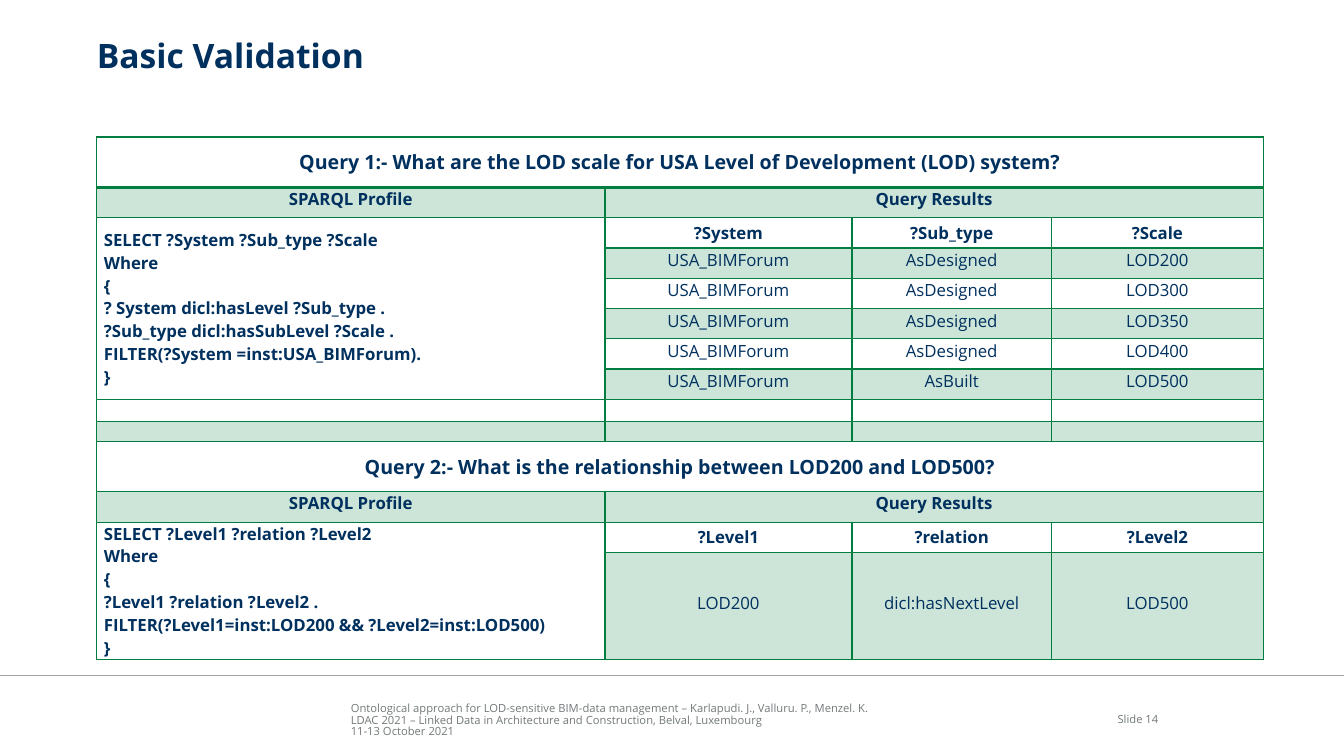
from pptx import Presentation
from pptx.dml.color import RGBColor
from pptx.enum.shapes import MSO_CONNECTOR
from pptx.enum.text import MSO_ANCHOR as Anchor, MSO_AUTO_SIZE as Fit, PP_ALIGN as Align
from pptx.oxml.ns import qn
from pptx.util import Inches, Pt
from lxml.etree import SubElement

COLORS = {"navy": "00305E", "green": "007D40", "gray": "727879", "rule": "A6A6A6"}
FONT = "Open Sans"
COLS = [5.04, 2.45, 1.98, 2.1]
GAPS = [0.22, 0.2]

SCALES = {
    "title": "Query 1:- What are the LOD scale for USA Level of Development (LOD) system?",
    "code": ["SELECT ?System ?Sub_type ?Scale", "Where", "{",
             "? System dicl:hasLevel ?Sub_type .",
             "?Sub_type dicl:hasSubLevel ?Scale .",
             "FILTER(?System =inst:USA_BIMForum).", "}"],
    "heads": ["?System", "?Sub_type", "?Scale"],
    "results": [["USA_BIMForum", "AsDesigned", f"LOD{n}"] for n in (200, 300, 350, 400)]
               + [["USA_BIMForum", "AsBuilt", "LOD500"]],
    "height": 0.3,
}
LEVELS = {
    "title": "Query 2:- What is the relationship between LOD200 and LOD500?",
    "code": ["SELECT ?Level1 ?relation ?Level2", "Where", "{",
             "?Level1 ?relation ?Level2 .",
             "FILTER(?Level1=inst:LOD200 && ?Level2=inst:LOD500)", "}"],
    "heads": ["?Level1", "?relation", "?Level2"],
    "results": [["LOD200", "dicl:hasNextLevel", "LOD500"]],
    "height": 1.06,
}
FOOTER = [
    "Ontological approach for LOD-sensitive BIM-data management – Karlapudi. J., Valluru. P., Menzel. K.",
    "LDAC 2021 – Linked Data in Architecture and Construction, Belval, Luxembourg",
    "11-13 October 2021",
]


def rgb(name):
    return RGBColor.from_string(COLORS[name])


def write(frame, lines, size, color="navy", bold=False, align=Align.LEFT, spacing=None):
    for i, line in enumerate(lines):
        para = frame.add_paragraph() if i else frame.paragraphs[0]
        para.alignment = align
        if spacing:
            para.line_spacing = spacing
        run = para.add_run()
        run.text = line
        font = run.font
        font.name, font.size, font.bold = FONT, Pt(size), bold
        font.color.rgb = rgb(color)


def clear_insets(frame):
    frame.margin_left = frame.margin_right = frame.margin_top = frame.margin_bottom = 0
    frame.word_wrap = True
    frame.auto_size = Fit.NONE


def add_title(slide, left, top, width, height):
    title = slide.shapes.title
    title.left, title.top = Inches(left), Inches(top)
    title.width, title.height = Inches(width), Inches(height)
    frame = title.text_frame
    clear_insets(frame)
    frame.vertical_anchor = Anchor.TOP
    write(frame, ["Basic Validation"], 24, bold=True, spacing=0.95)


def add_note(slide, lines, left, top, width, height, align):
    box = slide.shapes.add_textbox(Inches(left), Inches(top), Inches(width), Inches(height))
    clear_insets(box.text_frame)
    box.text_frame.vertical_anchor = Anchor.BOTTOM
    write(box.text_frame, lines, 8, "gray", align=align, spacing=0.85)


def add_footer(slide, top, width):
    rule = slide.shapes.add_connector(
        MSO_CONNECTOR.STRAIGHT, 0, Inches(top), Inches(width), Inches(top))
    rule.line.color.rgb = rgb("rule")
    rule.line.width = Pt(1)
    SubElement(rule._element.spPr, qn("a:effectLst"))
    add_note(slide, FOOTER, 3.48, top + 0.22, 5.57, 0.4, Align.LEFT)
    add_note(slide, ["Slide 14"], 10.72, top + 0.1, 0.77, 0.4, Align.RIGHT)


def add_border(cell, edge, points):
    line = SubElement(cell._tc.get_or_add_tcPr(), qn(f"a:ln{edge}"), w=str(Pt(points)))
    fill = SubElement(line, qn("a:solidFill"))
    SubElement(fill, qn("a:srgbClr"), val=COLORS["green"])


def style_cell(cell, row):
    """Draw the borders, and tint every second row."""
    for edge in "LRTB":
        thick = (row, edge) in ((0, "B"), (1, "T"))
        add_border(cell, edge, 2 if thick else 1)
    if row % 2:
        cell.fill.solid()
        cell.fill.fore_color.rgb = rgb("green")
        tint = cell._tc.tcPr.find(qn("a:solidFill"))[0]
        SubElement(tint, qn("a:alpha"), val="20000")
    else:
        cell.fill.background()
    cell.margin_left = cell.margin_right = Inches(0.07)
    cell.margin_top = cell.margin_bottom = 0
    cell.vertical_anchor = Anchor.MIDDLE


def fill_query(table, query, top):
    """Write one query block whose title stands in row top."""
    def put(row, col, lines, size=12, bold=True, align=Align.CENTER, spacing=None):
        cell = table.cell(row, col)
        write(cell.text_frame, lines, size, bold=bold, align=align, spacing=spacing)
        return cell

    last = top + 2 + len(query["results"])
    table.cell(top, 0).merge(table.cell(top, 3))
    table.cell(top + 1, 1).merge(table.cell(top + 1, 3))
    table.cell(top + 2, 0).merge(table.cell(last, 0))
    put(top, 0, [query["title"]], size=14)
    for col, text in enumerate(["SPARQL Profile", "Query Results"]):
        put(top + 1, col, [text]).vertical_anchor = Anchor.TOP
    put(top + 2, 0, query["code"], align=Align.LEFT)
    for col, text in enumerate(query["heads"], 1):
        put(top + 2, col, [text])
    for row, result in enumerate(query["results"], top + 3):
        for col, text in enumerate(result, 1):
            put(row, col, [text], bold=False, spacing=Pt(12))


def heights(query):
    return [0.5, 0.3, 0.3] + [query["height"]] * len(query["results"])


def add_queries(slide, left, top):
    first = heights(SCALES)
    rows = first + GAPS + heights(LEVELS)
    table = slide.shapes.add_table(
        len(rows), len(COLS), Inches(left), Inches(top),
        Inches(sum(COLS)), Inches(sum(rows))).table
    table.first_row = table.horz_banding = False
    for col, width in zip(table.columns, COLS):
        col.width = Inches(width)
    for i, height in enumerate(rows):
        table.rows[i].height = Inches(height)
        for cell in table.rows[i].cells:
            style_cell(cell, i)
            end = cell.text_frame.paragraphs[0]._p.get_or_add_endParaRPr()
            end.set("sz", "800")
    fill_query(table, SCALES, 0)
    fill_query(table, LEVELS, len(first) + len(GAPS))


def main():
    deck = Presentation()
    deck.slide_width, deck.slide_height = Inches(13.33), Inches(7.5)
    slide = deck.slides.add_slide(deck.slide_layouts[5])
    add_footer(slide, 6.7, 13.33)
    add_title(slide, 0.96, 0.38, 11.57, 0.75)
    add_queries(slide, 0.96, 1.36)
    deck.save("out.pptx")


if __name__ == "__main__":
    main()
